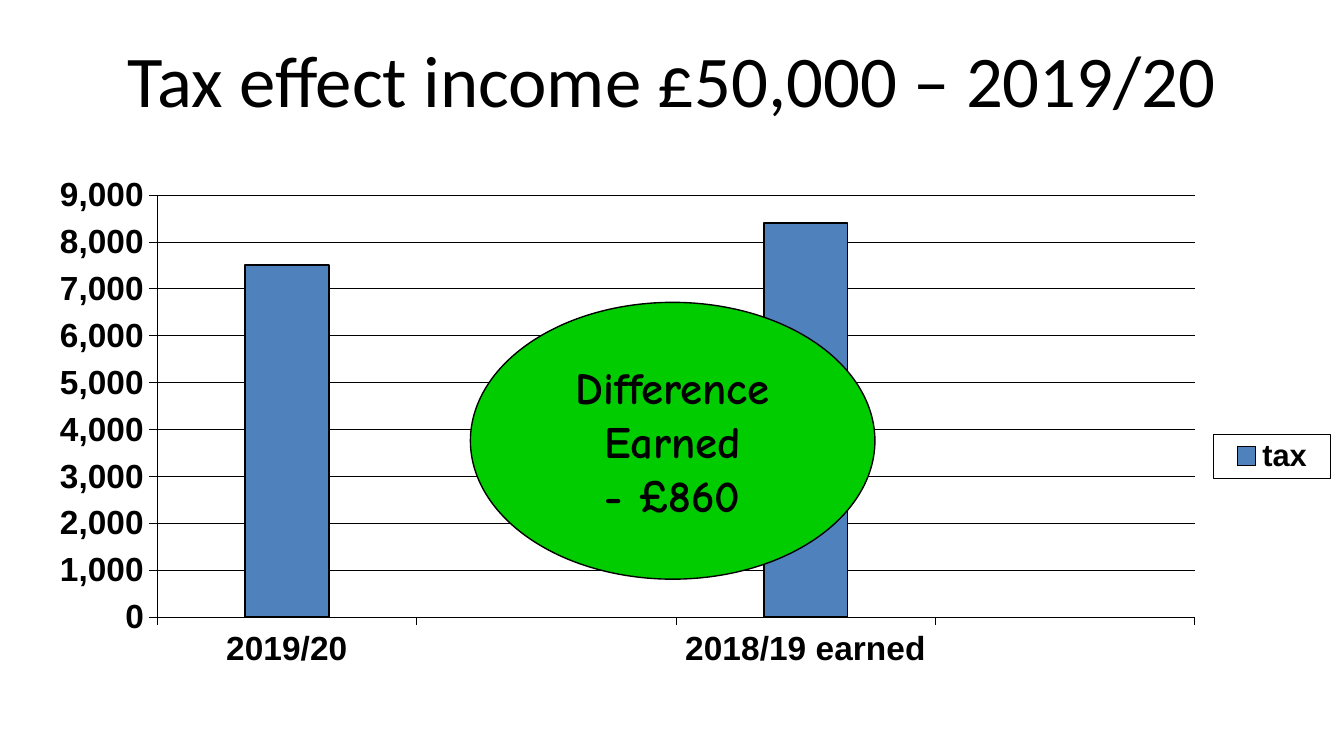
from lxml import etree
from pptx import Presentation
from pptx.chart.data import CategoryChartData
from pptx.dml.color import RGBColor
from pptx.enum.chart import XL_CHART_TYPE, XL_LEGEND_POSITION, XL_TICK_LABEL_POSITION, XL_TICK_MARK
from pptx.enum.shapes import MSO_SHAPE
from pptx.enum.text import MSO_ANCHOR, PP_ALIGN
from pptx.oxml.ns import qn
from pptx.util import Inches, Pt

COLORS = {"black": "000000", "bar": "4F81BD", "callout": "00CC00"}


def rgb(name):
    return RGBColor.from_string(COLORS[name])


def style_font(font, name, size, bold):
    font.name, font.size, font.bold = name, Pt(size), bold
    font.color.rgb = rgb("black")


def style_line(line, width):
    line.color.rgb = rgb("black")
    line.width = Pt(width)


def set_fill(fill, name):
    fill.solid()
    fill.fore_color.rgb = rgb(name)


def set_layout(parent, before, fractions, inner=False):
    """Fix the place of a plot area or legend; fractions are of the chart."""
    for old in parent.findall(qn("c:layout")):
        parent.remove(old)
    layout = etree.Element(qn("c:layout"))
    manual = etree.SubElement(layout, qn("c:manualLayout"))
    settings = [("layoutTarget", "inner")] if inner else []
    settings += [("xMode", "edge"), ("yMode", "edge")]
    settings += zip("xywh", fractions)
    for tag, value in settings:
        etree.SubElement(manual, qn(f"c:{tag}")).set("val", str(value))
    parent.insert(before, layout)


def add_title(s, box, text):
    title = s.shapes.title
    title.left, title.top, title.width, title.height = map(Inches, box)
    tf = title.text_frame
    tf.text = text
    tf.vertical_anchor = MSO_ANCHOR.TOP
    tf.margin_top = Inches(0.03)
    p = tf.paragraphs[0]
    p.alignment = PP_ALIGN.CENTER
    style_font(p.runs[0].font, "Calibri", 39, False)


def add_tax_chart(s, box):
    """The series is one value longer than the categories: a free last slot."""
    data = CategoryChartData(number_format="#,##0")
    data.categories = ["2019/20", "", "2018/19 earned"]
    data.add_series("tax", [7500, None, 8400, None])
    chart = s.shapes.add_chart(XL_CHART_TYPE.COLUMN_CLUSTERED,
                               *map(Inches, box), data).chart
    chart.has_title = False
    style_font(chart.font, "Arial", 17.9, True)

    plot = chart.plots[0]
    plot.gap_width = 210
    plot.vary_by_categories = False
    series = plot.series[0]
    set_fill(series.format.fill, "bar")
    style_line(series.format.line, 1)

    for axis in (chart.category_axis, chart.value_axis):
        axis.major_tick_mark = XL_TICK_MARK.OUTSIDE
        axis.minor_tick_mark = XL_TICK_MARK.NONE
        style_line(axis.format.line, 0.25)
        style_font(axis.tick_labels.font, "Arial", 17.9, True)
    chart.category_axis.tick_label_position = XL_TICK_LABEL_POSITION.LOW
    values = chart.value_axis
    values.minimum_scale, values.maximum_scale, values.major_unit = 0, 9000, 1000
    values.has_major_gridlines = True
    style_line(values.major_gridlines.format.line, 0.25)

    chart.has_legend = True
    legend = chart.legend
    legend.position = XL_LEGEND_POSITION.RIGHT
    legend.include_in_layout = False
    style_font(legend.font, "Arial", 16.5, True)
    add_legend_border(legend)

    width, height = box[2:]

    def fractions(x, y, w, h):
        return x / width, y / height, w / width, h / height

    plot_area = chart.element.find(".//" + qn("c:plotArea"))
    set_layout(plot_area, 0, fractions(1.17, 0.14, 7.72, 3.14), inner=True)
    set_layout(legend._element, 1, fractions(9.03, 1.92, 0.87, 0.33))


def add_legend_border(legend):
    props = etree.Element(qn("c:spPr"))
    line = etree.SubElement(props, qn("a:ln"), w=str(Pt(0.25)))
    fill = etree.SubElement(line, qn("a:solidFill"))
    etree.SubElement(fill, qn("a:srgbClr"), val=COLORS["black"])
    legend._element.find(qn("c:txPr")).addprevious(props)


def add_callout(s, box, lines):
    sp = s.shapes.add_shape(MSO_SHAPE.OVAL, *map(Inches, box))
    sp.shadow.inherit = False
    set_fill(sp.fill, "callout")
    style_line(sp.line, 0.75)
    tf = sp.text_frame
    tf.text = "\n".join(lines)
    tf.word_wrap = False
    tf.vertical_anchor = MSO_ANCHOR.MIDDLE
    for p in tf.paragraphs:
        p.alignment = PP_ALIGN.CENTER
        style_font(p.runs[0].font, "Comic Neue", 24, True)


def main():
    prs = Presentation()
    prs.slide_width = Inches(10)
    prs.slide_height = prs.slide_width * 9 // 16
    s = prs.slides.add_slide(prs.slide_layouts[5])
    add_title(s, (0.5, 0.23, 9, 0.94), "Tax effect income £50,000 – 2019/20")
    add_tax_chart(s, (0, 1.31, 9.94, 4.1))
    add_callout(s, (3.5, 2.25, 3.01, 2.06), ["Difference", "Earned", "- £860"])
    prs.save("out.pptx")


if __name__ == "__main__":
    main()
